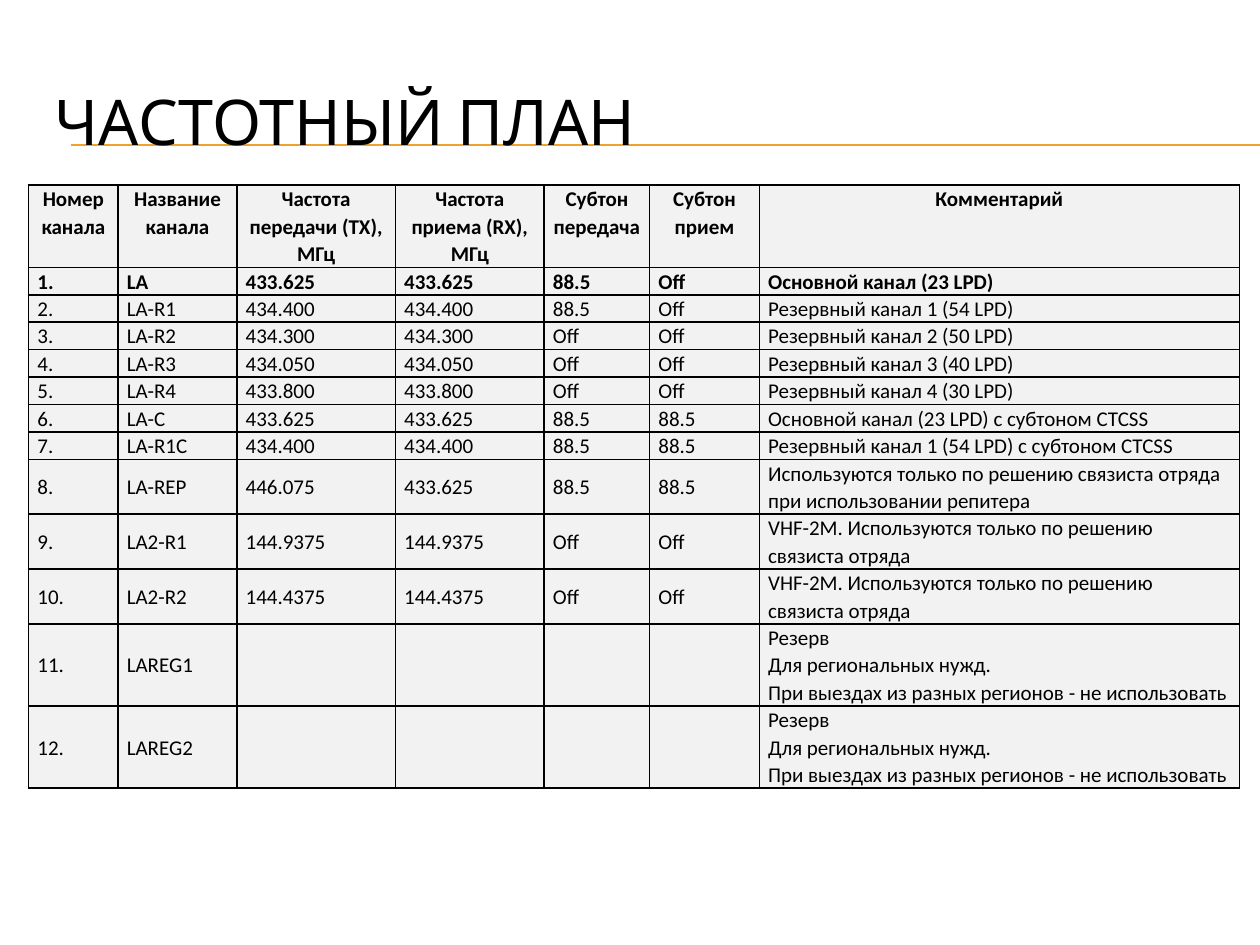
from copy import deepcopy

from lxml import etree
from pptx import Presentation
from pptx.dml.color import RGBColor
from pptx.enum.shapes import MSO_CONNECTOR
from pptx.enum.text import MSO_ANCHOR, PP_ALIGN
from pptx.oxml.ns import qn
from pptx.util import Pt

STRAIGHT = MSO_CONNECTOR.STRAIGHT
TOP, MIDDLE = MSO_ANCHOR.TOP, MSO_ANCHOR.MIDDLE
LEFT, CENTER = PP_ALIGN.LEFT, PP_ALIGN.CENTER

BLACK = RGBColor(0x00, 0x00, 0x00)
ORANGE = RGBColor(0xF0, 0xA2, 0x2E)
LIGHT_GRAY = RGBColor(0xF2, 0xF2, 0xF2)

TITLE = "ЧАСТОТНЫЙ ПЛАН"
HEADERS = [
    "Номер\vканала", "Название канала", "Частота передачи (TX), МГц",
    "Частота приема (RX), МГц", "Субтон\vпередача", "Субтон\vприем", "Комментарий",
]
VHF = "VHF-2M. Используются только по решению связиста отряда"
RESERVE = ("Резерв\nДля региональных нужд. \v"
           "При выездах из разных регионов - не использовать")
CHANNELS = [
    ("LA", "433.625", "433.625", "88.5", "Off", "Основной канал (23 LPD)"),
    ("LA-R1", "434.400", "434.400", "88.5", "Off", "Резервный канал 1 (54 LPD)"),
    ("LA-R2", "434.300", "434.300", "Off", "Off", "Резервный канал 2 (50 LPD)"),
    ("LA-R3", "434.050", "434.050", "Off", "Off", "Резервный канал 3 (40 LPD)"),
    ("LA-R4", "433.800", "433.800", "Off", "Off", "Резервный канал 4 (30 LPD)"),
    ("LA-C", "433.625", "433.625", "88.5", "88.5",
     "Основной канал (23 LPD) с субтоном CTCSS"),
    ("LA-R1С", "434.400", "434.400", "88.5", "88.5",
     "Резервный канал 1 (54 LPD) с субтоном CTCSS"),
    ("LA-REP", "446.075", "433.625", "88.5", "88.5",
     "Используются только по решению связиста отряда при использовании репитера"),
    ("LA2-R1", "144.9375", "144.9375", "Off", "Off", VHF),
    ("LA2-R2", "144.4375", "144.4375", "Off", "Off", VHF),
    ("LAREG1", "", "", "", "", RESERVE),
    ("LAREG2", "", "", "", "", RESERVE),
]
ROWS = [HEADERS] + [(f"{number}.", *channel) for number, channel in enumerate(CHANNELS, 1)]
LINES_PER_ROW = [3] + [1] * 7 + [2] * 3 + [3] * 2
COLUMN_WIDTHS = [51.1, 67.9, 90.6, 85, 60.3, 62.7, 274.3]
LINE_HEIGHT = 15.65
TABLE_LEFT, TABLE_TOP = 16.4, 105.8
SLIDE_WIDTH, SLIDE_HEIGHT = 720, 540
RULE_LEFT, RULE_TOPS = 40.5, (82.9, 83.3)

CELL_FORMAT = {"margin_left": Pt(5), "margin_right": Pt(5),
               "margin_top": 0, "margin_bottom": 0}
TABLE_FLAGS = {"first_row": False, "horz_banding": False}
TITLE_FONT = {"name": "Cabin", "size": Pt(36), "bold": False}
CELL_FONT = {"name": "Calibri", "size": Pt(12)}


def apply_format(target, values):
    for name, value in values.items():
        setattr(target, name, value)


def format_font(font, values):
    apply_format(font, values)
    font.color.rgb = BLACK


def add_borders(cell):
    properties = cell._tc.get_or_add_tcPr()
    for side in ("lnL", "lnR", "lnT", "lnB"):
        line = etree.SubElement(properties, qn(f"a:{side}"), w=str(Pt(1)))
        fill = etree.SubElement(line, qn("a:solidFill"))
        etree.SubElement(fill, qn("a:srgbClr"), val=str(BLACK))


def fill_cell(cell, text, is_header, bold):
    add_borders(cell)
    cell.fill.solid()
    cell.fill.fore_color.rgb = LIGHT_GRAY
    apply_format(cell, CELL_FORMAT)
    cell.vertical_anchor = TOP if is_header else MIDDLE
    cell.text_frame.text = text
    for paragraph in cell.text_frame.paragraphs:
        paragraph.alignment = CENTER if is_header else LEFT
        paragraph.line_spacing = 1.07
        format_font(paragraph.font, CELL_FONT)
        for run in paragraph.runs:
            format_font(run.font, {**CELL_FONT, "bold": bold})
        for line_break in paragraph._p.findall(qn("a:br")):
            line_break.append(deepcopy(paragraph.runs[0]._r.rPr))


def add_title(slide):
    title = slide.shapes.title
    apply_format(title, {"left": Pt(24), "top": Pt(36), "width": Pt(684), "height": Pt(66)})
    title.text_frame.text = TITLE
    title.text_frame.vertical_anchor = MIDDLE
    paragraph = title.text_frame.paragraphs[0]
    paragraph.alignment = LEFT
    format_font(paragraph.runs[0].font, TITLE_FONT)
    return title


def add_rules(slide, title):
    for top in RULE_TOPS:
        rule = slide.shapes.add_connector(
            STRAIGHT, Pt(RULE_LEFT), Pt(top), Pt(SLIDE_WIDTH), Pt(top))
        rule.line.color.rgb = ORANGE
        rule.line.width = Pt(0.75)
        etree.SubElement(rule.element.spPr, qn("a:effectLst"))
        title.element.addprevious(rule.element)


def add_channel_table(slide):
    table = slide.shapes.add_table(
        len(ROWS), len(HEADERS), Pt(TABLE_LEFT), Pt(TABLE_TOP),
        Pt(sum(COLUMN_WIDTHS)), Pt(LINE_HEIGHT * sum(LINES_PER_ROW))).table
    apply_format(table, TABLE_FLAGS)
    for column, width in zip(table.columns, COLUMN_WIDTHS):
        column.width = Pt(width)
    for row_index, (row, texts) in enumerate(zip(table.rows, ROWS)):
        row.height = Pt(LINE_HEIGHT * LINES_PER_ROW[row_index])
        for cell, text in zip(row.cells, texts):
            fill_cell(cell, text, row_index == 0, row_index < 2)


def main():
    presentation = Presentation()
    presentation.slide_width = Pt(SLIDE_WIDTH)
    presentation.slide_height = Pt(SLIDE_HEIGHT)
    slide = presentation.slides.add_slide(presentation.slide_layouts[5])
    title = add_title(slide)
    add_rules(slide, title)
    add_channel_table(slide)
    presentation.save("out.pptx")


if __name__ == "__main__":
    main()
